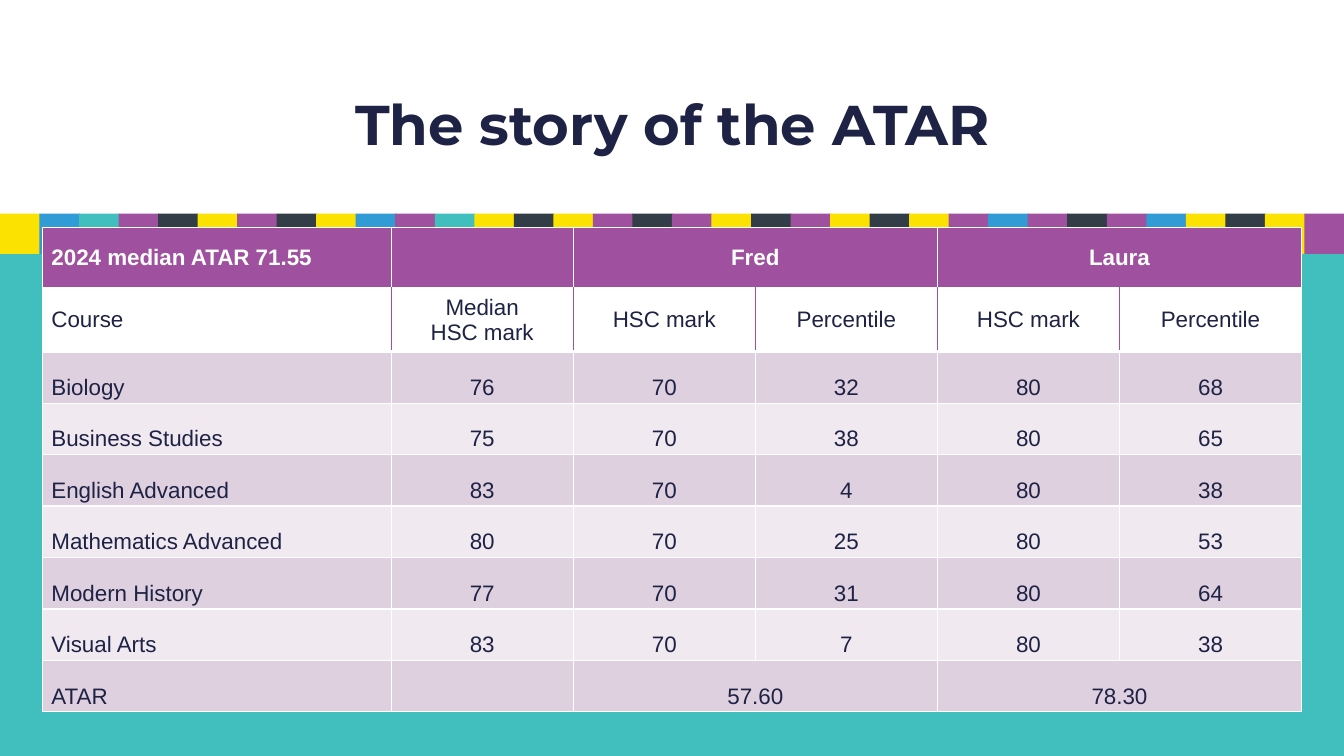
from lxml import etree
from pptx import Presentation
from pptx.dml.color import RGBColor
from pptx.enum.shapes import MSO_SHAPE
from pptx.enum.text import MSO_ANCHOR, PP_ALIGN
from pptx.oxml.ns import qn
from pptx.util import Inches, Pt

RECT = MSO_SHAPE.RECTANGLE
MIDDLE = MSO_ANCHOR.MIDDLE
LEFT, CENTER = PP_ALIGN.LEFT, PP_ALIGN.CENTER

WHITE = RGBColor(0xFF, 0xFF, 0xFF)
NAVY = RGBColor(0x1E, 0x22, 0x45)
TEAL = RGBColor(0x40, 0xBF, 0xBE)
YELLOW = RGBColor(0xFB, 0xE2, 0x00)
PURPLE = RGBColor(0x9F, 0x51, 0x9F)
BLUE = RGBColor(0x31, 0x9B, 0xD6)
DARK = RGBColor(0x33, 0x3D, 0x47)
LILAC = RGBColor(0xDF, 0xD0, 0xDF)
PALE = RGBColor(0xF0, 0xE9, 0xF0)

WIDE, HIGH = Inches(13.33), Inches(7.5)
TILES = {"Y": YELLOW, "P": PURPLE, "B": BLUE, "D": DARK, "T": TEAL}
STRIP = "YBTPDYPDYBPTYDYPDPYDPYDYPBPDPBYDYP"

MARKS = [
    ["2024 median ATAR 71.55", "", "Fred", "", "Laura", ""],
    ["Course", "Median\nHSC mark", "HSC mark", "Percentile", "HSC mark", "Percentile"],
    ["Biology", "76", "70", "32", "80", "68"],
    ["Business Studies", "75", "70", "38", "80", "65"],
    ["English Advanced", "83", "70", "4", "80", "38"],
    ["Mathematics Advanced", "80", "70", "25", "80", "53"],
    ["Modern History", "77", "70", "31", "80", "64"],
    ["Visual Arts", "83", "70", "7", "80", "38"],
    ["ATAR", "", "57.60", "", "78.30", ""],
]
LAST = len(MARKS) - 1


def add_block(slide, box, color):
    block = slide.shapes.add_shape(RECT, *box)
    block.shadow.inherit = False
    block.fill.solid()
    block.fill.fore_color.rgb = color
    block.line.fill.background()


def add_strip(slide, box):
    left, top, width, height = box
    step = width / len(STRIP)
    for i, key in enumerate(STRIP):
        add_block(slide, (int(left + i * step), top, height, height), TILES[key])


def add_title(slide, box, text):
    title = slide.shapes.title
    title.left, title.top, title.width, title.height = box
    # Bring the title in front of the white band
    title.element.getparent().append(title.element)
    frame = title.text_frame
    frame.text = text
    frame.vertical_anchor = MIDDLE
    para = frame.paragraphs[0]
    para.alignment = CENTER
    para.line_spacing = 0.9
    font = para.runs[0].font
    font.name, font.size, font.bold = "Montserrat", Pt(40), True
    font.color.rgb = NAVY


def set_edges(cell, edges):
    props = cell._tc.get_or_add_tcPr()
    for i, (side, (color, width)) in enumerate(edges.items()):
        line = etree.Element(qn("a:ln" + side), w=str(Pt(width)))
        fill = etree.SubElement(line, qn("a:solidFill"))
        etree.SubElement(fill, qn("a:srgbClr"), val=str(color))
        props.insert(i, line)


def style_cell(cell, row, col, text):
    # Fill and edges
    cell.fill.solid()
    head = {0: PURPLE, 1: WHITE}
    cell.fill.fore_color.rgb = head.get(row, PALE if row % 2 else LILAC)
    rule = PURPLE if row == 1 else WHITE
    set_edges(cell, {
        "L": (rule if col > 0 else WHITE, 1),
        "R": (rule if col < 5 else WHITE, 1),
        "T": (WHITE, 2.25 if row in (1, 2) else 1),
        "B": (WHITE, 2.25 if row in (0, 1) else 1),
    })
    # Text
    cell.vertical_anchor = MIDDLE
    cell.margin_left = Inches(0.03 if col else 0.09)
    cell.margin_right = Inches(0.03)
    cell.margin_top = cell.margin_bottom = Inches(0.03 if row else 0.01)
    cell.text_frame.text = text
    for para in cell.text_frame.paragraphs:
        para.alignment = CENTER if col else LEFT
        if row > 1:
            para.line_spacing = Pt(32.4)
        for run in para.runs:
            font = run.font
            font.name, font.size, font.bold = "Arial", Pt(16), row == 0
            font.color.rgb = NAVY if row else WHITE


def add_marks(slide, box):
    table = slide.shapes.add_table(len(MARKS), len(MARKS[0]), *box).table
    first = int(box[2] * 0.277)
    for i, col in enumerate(table.columns):
        col.width = (box[2] - first) // 5 if i else first
    heights = {0: 0.6, 1: 0.63}
    for i, row in enumerate(table.rows):
        row.height = Inches(heights.get(i, 0.39))
    for r, line in enumerate(MARKS):
        for c, text in enumerate(line):
            style_cell(table.cell(r, c), r, c, text)
    # Each student's name and ATAR spans two columns
    for r in (0, LAST):
        for c in (2, 4):
            table.cell(r, c).merge(table.cell(r, c + 1))


def main():
    prs = Presentation()
    prs.slide_width, prs.slide_height = WIDE, HIGH
    slide = prs.slides.add_slide(prs.slide_layouts[5])
    slide.background.fill.solid()
    slide.background.fill.fore_color.rgb = TEAL

    add_block(slide, (0, 0, WIDE, Inches(2.17)), WHITE)
    add_strip(slide, (0, Inches(2.12), WIDE, Inches(0.4)))
    add_title(slide, (Inches(0.92), Inches(0.6), Inches(11.5), Inches(1.32)),
              "The story of the ATAR")
    add_marks(slide, (Inches(0.42), Inches(2.26), Inches(12.49), Inches(4.3)))
    prs.save("out.pptx")


if __name__ == "__main__":
    main()
